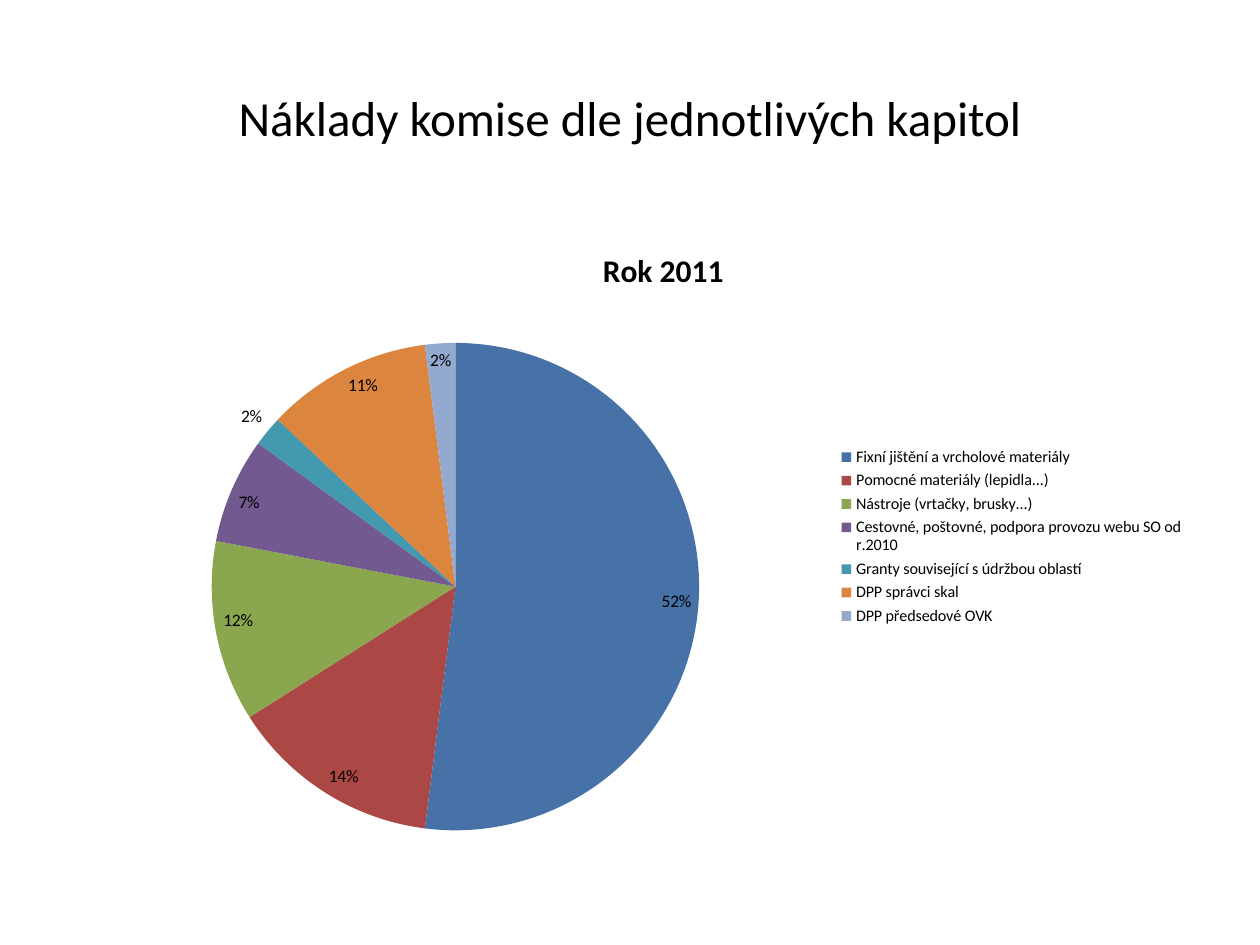
from dataclasses import dataclass

from pptx import Presentation
from pptx.chart.data import CategoryChartData
from pptx.dml.color import RGBColor
from pptx.enum.chart import XL_CHART_TYPE, XL_LABEL_POSITION, XL_LEGEND_POSITION
from pptx.enum.text import MSO_ANCHOR, PP_ALIGN
from pptx.oxml import parse_xml
from pptx.oxml.ns import nsdecls
from pptx.util import Inches, Pt

PIE = XL_CHART_TYPE.PIE
INSIDE = XL_LABEL_POSITION.INSIDE_END
OUTSIDE = XL_LABEL_POSITION.OUTSIDE_END
RIGHT = XL_LEGEND_POSITION.RIGHT
MIDDLE = MSO_ANCHOR.MIDDLE
CENTER = PP_ALIGN.CENTER


@dataclass(frozen=True)
class Theme:
    font: str = "Calibri"
    ink: str = "000000"
    head: float = 28
    title: float = 18
    label: float = 10
    legend: float = 9.2


THEME = Theme()

# category, share in percent, slice colour
COSTS = [
    ("Fixní jištění a vrcholové materiály", 52, "4672A8"),
    ("Pomocné materiály (lepidla...)", 14, "AB4744"),
    ("Nástroje (vrtačky, brusky...)", 12, "8AA64F"),
    ("Cestovné, poštovné, podpora provozu webu SO od r.2010", 7, "725990"),
    ("Granty související s údržbou oblastí", 2, "4299B0"),
    ("DPP správci skal", 11, "DC853E"),
    ("DPP předsedové OVK", 2, "93A9CF"),
]
GRANTS = 4


def style(font, size, bold=False):
    font.name = THEME.font
    font.size = Pt(size)
    font.bold = bold
    font.color.rgb = RGBColor.from_string(THEME.ink)


def layout(x, y, w=None, h=None, inner=False):
    """Return a manual chart layout in fractions of the chart box."""
    parts = ['<c:layoutTarget val="inner"/>'] if inner else []
    parts += ['<c:xMode val="edge"/>', '<c:yMode val="edge"/>']
    sizes = {"x": x, "y": y, "w": w, "h": h}
    parts += [f'<c:{k} val="{v}"/>' for k, v in sizes.items() if v is not None]
    body = "".join(parts)
    return parse_xml(
        f'<c:layout {nsdecls("c")}><c:manualLayout>{body}</c:manualLayout></c:layout>'
    )


def place(part, after, frame):
    """Give a chart part its layout, next to the child named after."""
    for old in part.xpath("c:layout"):
        part.remove(old)
    if after:
        part.xpath(after)[0].addnext(frame)
    else:
        part.insert(0, frame)


def add_head(slide, box, text):
    shape = slide.shapes.add_textbox(*box)
    frame = shape.text_frame
    frame.word_wrap = True
    frame.vertical_anchor = MIDDLE
    para = frame.paragraphs[0]
    para.alignment = CENTER
    run = para.add_run()
    run.text = text
    style(run.font, THEME.head)


def add_labels(plot):
    plot.has_data_labels = True
    labels = plot.data_labels
    labels.show_percentage = True
    labels.show_value = False
    labels.number_format = "0%"
    labels.number_format_is_linked = False
    labels.position = INSIDE
    style(labels.font, THEME.label)


def color_slices(series):
    for i, (_, _, color) in enumerate(COSTS):
        fill = series.points[i].format.fill
        fill.solid()
        fill.fore_color.rgb = RGBColor.from_string(color)


def move_label(point, series):
    """Put one narrow slice's percentage outside the pie."""
    label = point.data_label
    style(label.font, THEME.label)
    label.position = OUTSIDE
    group = series.data_labels
    group.show_percentage = True
    group.show_value = False
    group.number_format = "0%"
    group.number_format_is_linked = False
    group.position = INSIDE
    style(group.font, THEME.label)
    for name, val in (("showVal", "0"), ("showPercent", "1")):
        for flag in series.data_labels._element.xpath(f"c:dLbl/c:{name}"):
            flag.set("val", val)


def add_pie(slide, box, title):
    data = CategoryChartData()
    data.categories = [name for name, _, _ in COSTS]
    data.add_series("Series 1", [share for _, share, _ in COSTS])
    chart = slide.shapes.add_chart(PIE, *box, data).chart
    style(chart.font, THEME.label)

    chart.has_title = True
    run = chart.chart_title.text_frame.paragraphs[0].add_run()
    run.text = title
    style(run.font, THEME.title, bold=True)

    plot = chart.plots[0]
    plot.vary_by_categories = True
    series = plot.series[0]
    color_slices(series)
    add_labels(plot)
    move_label(series.points[GRANTS], series)

    chart.has_legend = True
    legend = chart.legend
    legend.position = RIGHT
    legend.include_in_layout = False
    style(legend.font, THEME.legend)

    root = chart._chartSpace
    place(root.xpath("c:chart/c:title")[0], "c:tx", layout(0.47, 0.03))
    place(root.xpath("c:chart/c:plotArea")[0], None,
          layout(0.13, 0.19, 0.43, 0.78, inner=True))
    place(root.xpath("c:chart/c:legend")[0], "c:legendPos",
          layout(0.68, 0.35, 0.31, 0.3))


def main():
    deck = Presentation()
    deck.slide_width, deck.slide_height = Inches(10), Inches(7.5)
    slide = deck.slides.add_slide(deck.slide_layouts[6])
    head = [Inches(v) for v in (0.5, 0.3, 9, 1.25)]
    body = [Inches(v) for v in (0.51, 1.78, 9, 4.96)]
    add_head(slide, head, "Náklady komise dle jednotlivých kapitol")
    add_pie(slide, body, "Rok 2011")
    deck.save("out.pptx")


if __name__ == "__main__":
    main()
